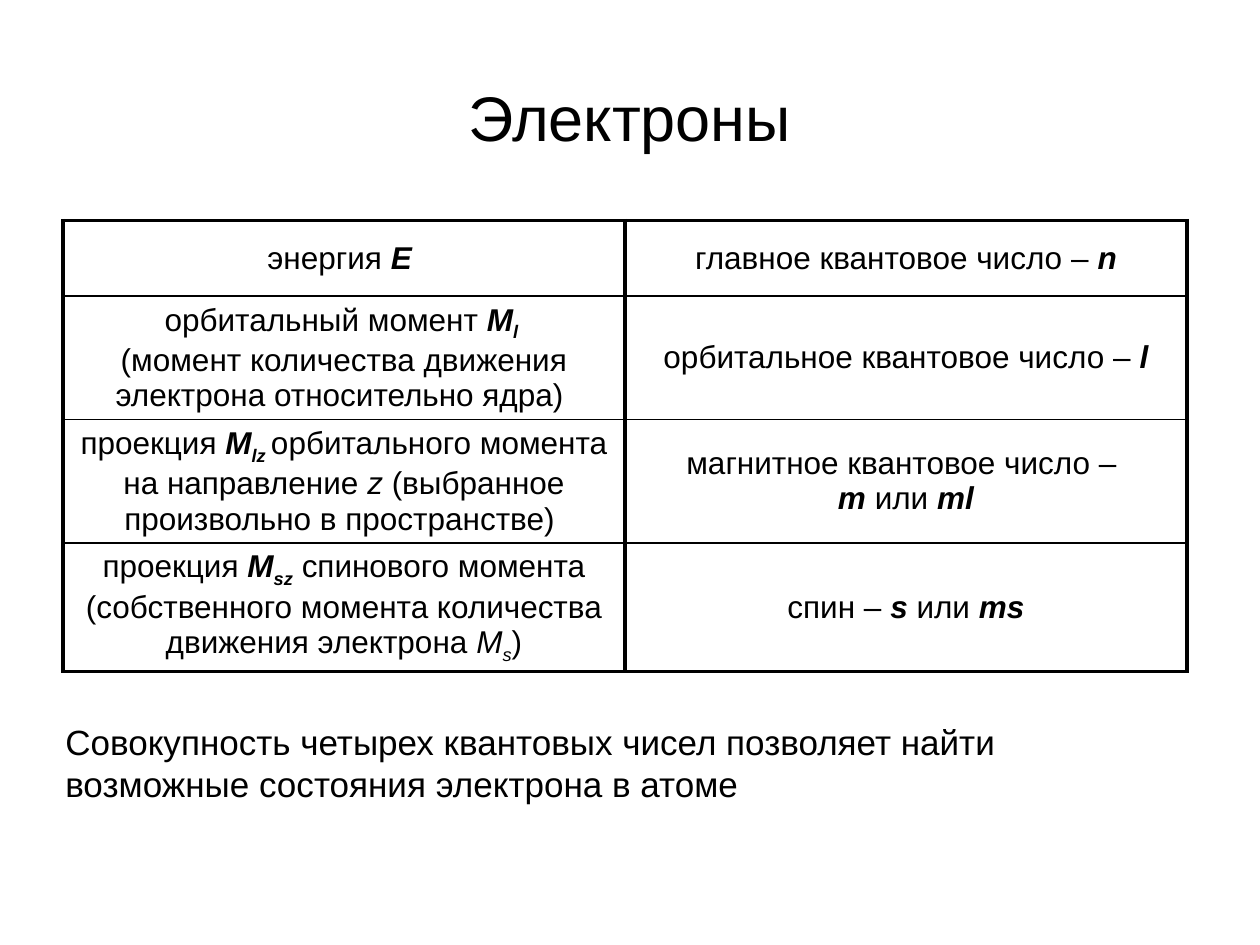
from pptx import Presentation
from pptx.dml.color import RGBColor
from pptx.enum.text import MSO_ANCHOR, MSO_AUTO_SIZE, PP_ALIGN
from pptx.oxml.ns import qn
from pptx.util import Pt
from lxml import etree

BLACK = RGBColor(0, 0, 0)
WHITE = RGBColor(255, 255, 255)
FONT = "Arial"
OUTER, INNER = 2.25, 1


def add_run(paragraph, text, size, style=""):
    """Style letters: b bold, i italic, _ subscript."""
    run = paragraph.add_run()
    run.text = text
    font = run.font
    font.name, font.size, font.color.rgb = FONT, Pt(size), BLACK
    font.bold, font.italic = "b" in style, "i" in style
    if "_" in style:
        run._r.get_or_add_rPr().set("baseline", "-25000")


def add_border(cell, side, width):
    line = etree.SubElement(cell._tc.get_or_add_tcPr(), qn(f"a:ln{side}"), w=str(Pt(width)))
    fill = etree.SubElement(line, qn("a:solidFill"))
    etree.SubElement(fill, qn("a:srgbClr"), val=str(BLACK))


presentation = Presentation()
presentation.slide_width, presentation.slide_height = Pt(720), Pt(540)
slide = presentation.slides.add_slide(presentation.slide_layouts[5])
slide.background.fill.solid()
slide.background.fill.fore_color.rgb = WHITE

# Title
title = slide.shapes.title
title.left, title.top, title.width, title.height = Pt(36), Pt(21.6), Pt(648), Pt(90)
title.text_frame.auto_size = MSO_AUTO_SIZE.NONE
title.text_frame.vertical_anchor = MSO_ANCHOR.MIDDLE
heading = title.text_frame.paragraphs[0]
heading.alignment = PP_ALIGN.CENTER
add_run(heading, "Электроны", 36)

# Physical quantities and their quantum numbers; "\n" stands for a line break
quantum_numbers = [
    ([("энергия ", ""), ("Е ", "bi")],
     [("главное квантовое число – ", ""), ("n", "bi")]),
    ([("орбитальный момент ", ""), ("M", "bi"), ("l ", "bi_"), ("\n", ""),
      ("(момент количества движения электрона относительно ядра) ", "")],
     [("орбитальное квантовое число – ", ""), ("l", "bi")]),
    ([("проекция ", ""), ("M", "bi"), ("lz ", "bi_"),
      ("орбитального момента на направление ", ""), ("z", "i"),
      (" (выбранное произвольно в пространстве) ", "")],
     [("магнитное квантовое число – ", ""), ("\n", ""),
      ("m", "bi"), (" или ", ""), ("ml", "bi")]),
    ([("проекция ", ""), ("M", "bi"), ("sz", "bi_"),
      (" спинового момента (собственного момента количества движения электрона ", ""),
      ("M", "i"), ("s", "i_"), (")", "")],
     [("спин – ", ""), ("s ", "bi"), ("или ", ""), ("ms", "bi")]),
]

# Table
row_count = len(quantum_numbers)
table = slide.shapes.add_table(row_count, 2, Pt(36), Pt(126), Pt(642.24), Pt(259.2)).table
table.first_row = table.horz_banding = False
for column in table.columns:
    column.width = Pt(321.12)
for row_index, row_content in enumerate(quantum_numbers):
    table.rows[row_index].height = Pt(43.2)
    for column_index, runs in enumerate(row_content):
        cell = table.cell(row_index, column_index)
        cell.vertical_anchor = MSO_ANCHOR.MIDDLE
        add_border(cell, "L", OUTER)
        add_border(cell, "R", OUTER)
        add_border(cell, "T", OUTER if row_index == 0 else INNER)
        add_border(cell, "B", OUTER if row_index == row_count - 1 else INNER)
        cell.fill.background()
        paragraph = cell.text_frame.paragraphs[0]
        paragraph.alignment = PP_ALIGN.CENTER
        paragraph.space_before = Pt(3.6)
        for text, style in runs:
            if text == "\n":
                paragraph.add_line_break()
            else:
                add_run(paragraph, text, 18, style)

# Conclusion
conclusion = slide.shapes.add_textbox(Pt(30.24), Pt(408.24), Pt(648), Pt(72)).text_frame
conclusion.word_wrap = True
conclusion.paragraphs[0].space_before = Pt(4)
add_run(conclusion.paragraphs[0],
        "Совокупность четырех квантовых чисел позволяет найти "
        "возможные состояния электрона в атоме", 20)

presentation.save("out.pptx")
